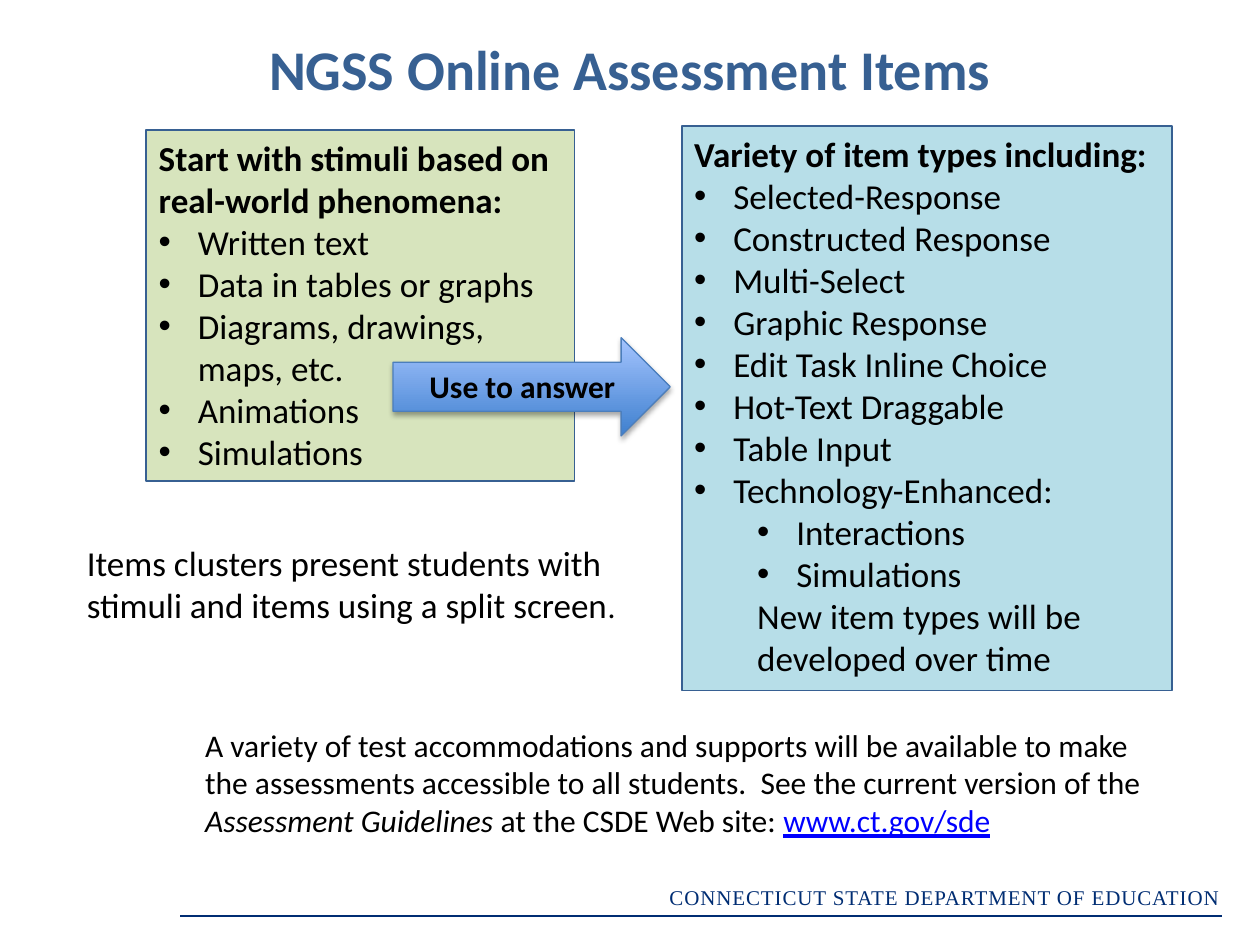
import pptx
import pptx.util
import pptx.dml.color
import pptx.enum.text
import pptx.enum.shapes
import pptx.oxml
import pptx.oxml.ns

COLS, ROWS = 100, 75
UNIT = pptx.util.Inches(0.1)
TEXT = pptx.enum.text
KIND = pptx.enum.shapes
NAVY, BLUE = "002D73", "376092"


def color(code):
    """Turn a hex string into a colour."""
    return pptx.dml.color.RGBColor.from_string(code)


def scale(*spans):
    """Turn grid columns and rows into lengths."""
    return [round(span * UNIT) for span in spans]


def place(shape, box):
    """Set a shape to a grid box."""
    shape.left, shape.top, shape.width, shape.height = scale(*box)


def child(parent, tag, **attrs):
    """Append a drawing element with its attributes."""
    node = pptx.oxml.ns.qn("a:" + tag)
    item = parent.makeelement(node, attrs)
    parent.append(item)
    return item


def write(para, text, size=20, ink="000000", face="Calibri", bold=False,
          slant=False, under=False, track=None):
    """Add one formatted run to a paragraph."""
    run = para.add_run()
    run.text = text
    font = run.font
    font.size, font.name = pptx.util.Pt(size), face
    font.bold, font.italic, font.underline = bold, slant, under
    font.color.rgb = color(ink)
    if track:
        run._r.get_or_add_rPr().set("spc", str(track))


def indent(para, left, hang, mark):
    """Set the indent in inches and the bullet of a paragraph."""
    para.space_before = pptx.util.Pt(0)
    props = para._p.get_or_add_pPr()
    props.set("marL", str(pptx.util.Inches(left)))
    props.set("indent", str(-pptx.util.Inches(hang)))
    if mark:
        child(props, "buFont", typeface="Arial")
        child(props, "buChar", char="•")
    else:
        child(props, "buNone")


def title(shape, box, text):
    """Fill the title placeholder."""
    place(shape, box)
    frame = shape.text_frame
    frame.auto_size = TEXT.MSO_AUTO_SIZE.NONE
    frame.vertical_anchor = TEXT.MSO_ANCHOR.MIDDLE
    para = frame.paragraphs[0]
    para.alignment = TEXT.PP_ALIGN.CENTER
    write(para, text, size=32, ink=BLUE, bold=True)


def panel(shape, box, fill, head, items, subs=(), close=None):
    """Fill a body placeholder as a framed list under a bold heading."""
    place(shape, box)
    shape.fill.solid()
    shape.fill.fore_color.rgb = color(fill)
    shape.line.color.rgb = color(BLUE)
    shape.line.width = pptx.util.Pt(1)
    frame = shape.text_frame
    frame.auto_size = TEXT.MSO_AUTO_SIZE.NONE
    rows = [(head, 0, 0, 0, False)]
    rows += [(item, 0, 0.31, 0.31, True) for item in items]
    rows += [(sub, 1, 0.81, 0.31, True) for sub in subs]
    if close:
        rows.append((close, 1, 0.5, 0, False))
    for spot, (text, level, left, hang, mark) in enumerate(rows):
        para = frame.add_paragraph() if spot else frame.paragraphs[0]
        para.level = level
        indent(para, left, hang, mark)
        write(para, text, bold=spot == 0)


def note(slide, box, lines, wrap=True, align=TEXT.PP_ALIGN.LEFT):
    """Add a text box whose lines are lists of text and format pairs."""
    frame = slide.shapes.add_textbox(*scale(*box)).text_frame
    frame.word_wrap = wrap
    frame.auto_size = TEXT.MSO_AUTO_SIZE.SHAPE_TO_FIT_TEXT
    for spot, runs in enumerate(lines):
        para = frame.add_paragraph() if spot else frame.paragraphs[0]
        para.alignment = align
        for text, form in runs:
            write(para, text, **form)


def arrow(slide, box, text):
    """Add the shaded arrow and its label."""
    shape = slide.shapes.add_shape(KIND.MSO_SHAPE.RIGHT_ARROW, *scale(*box))
    shape.fill.gradient()
    shape.fill.gradient_angle = 90
    for stop, code in zip(shape.fill.gradient_stops, ("3F80CE", "A4C4FF")):
        stop.color.rgb = color(code)
    for stop, share in zip(shape.fill.gradient_stops, (0, 1)):
        stop.position = share
    shape.line.color.rgb = color("4B7EBC")
    shape.line.width = pptx.util.Pt(0.75)
    glow = child(child(shape._element.spPr, "effectLst"), "outerShdw",
                 blurRad=str(pptx.util.Pt(3.1)), dist=str(pptx.util.Pt(1.8)),
                 dir="5400000", rotWithShape="0")
    child(child(glow, "srgbClr", val="000000"), "alpha", val="35000")
    left, top, width, height = box
    label = (left + 1.9, top + 1.8, width - 5.1, height / 2)
    note(slide, label, [[(text, dict(size=18, bold=True))]], wrap=False)


def footer(slide, box, text):
    """Add the rule along the foot and the name above it."""
    left, top, width, height = box
    foot = top + height
    rule = slide.shapes.add_connector(
        KIND.MSO_CONNECTOR.STRAIGHT, *scale(left, foot, left + width, foot))
    rule.line.color.rgb = color(NAVY)
    rule.line.width = pptx.util.Pt(0.75)
    child(rule._element.spPr, "effectLst")
    form = dict(size=12, ink=NAVY, face="Times New Roman", track=50)
    note(slide, (51.6, top, 46.2, height), [[(text, form)]],
         align=TEXT.PP_ALIGN.RIGHT)


def main():
    """Build and save the slide."""
    deck = pptx.Presentation()
    deck.slide_width, deck.slide_height = scale(COLS, ROWS)
    slide = deck.slides.add_slide(deck.slide_layouts[3])
    head, start, kinds = slide.placeholders
    title(head, (5, 2.1, 90, 6.6), "NGSS Online Assessment Items")
    panel(start, (11.6, 10.3, 34, 27.9), "D7E4BD",
          "Start with stimuli based on real-world phenomena:",
          ["Written text", "Data in tables or graphs",
           "Diagrams, drawings, maps, etc.", "Animations", "Simulations"])
    panel(kinds, (54.1, 10, 38.9, 44.8), "B7DEE8",
          "Variety of item types including:",
          ["Selected-Response", "Constructed Response", "Multi-Select",
           "Graphic Response", "Edit Task Inline Choice",
           "Hot-Text Draggable", "Table Input", "Technology-Enhanced:"],
          ["Interactions", "Simulations"],
          "New item types will be developed over time")
    arrow(slide, (31.2, 26.8, 22, 7.8), "Use to answer")
    note(slide, (5.9, 42.5, 44.1, 7.7), [[
        ("Items clusters present students with stimuli and items "
         "using a split screen", {}), (".", dict(size=18))]])
    mid = dict(size=18)
    note(slide, (15.3, 57.1, 77.7, 10.1), [
        [("A variety of test accommodations and supports will be "
          "available to make", mid)],
        [("the assessments accessible to all students.  See the current "
          "version of the", mid)],
        [("Assessment Guidelines ", dict(size=18, slant=True)),
         ("at the CSDE Web site: ", mid),
         ("www.ct.gov/sde", dict(size=18, ink="0000FF", under=True))],
    ], wrap=False)
    footer(slide, (14.3, 69.7, 82.7, 3),
           "CONNECTICUT STATE DEPARTMENT OF EDUCATION")
    deck.save("out.pptx")


if __name__ == "__main__":
    main()
